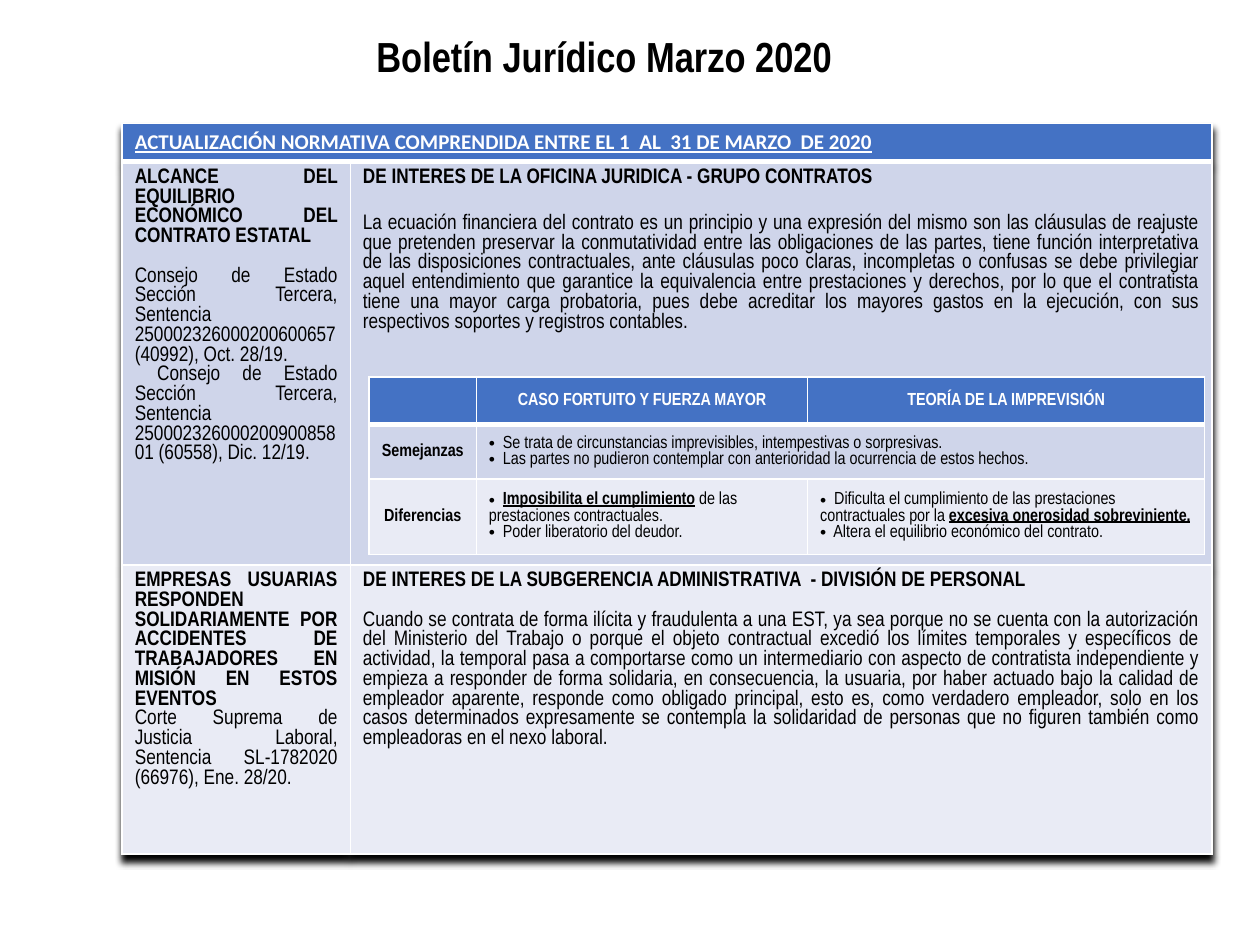
import pptx
import pptx.dml.color
import pptx.enum.text
import pptx.oxml
import pptx.oxml.ns
import pptx.util
import lxml.etree

COLORS = {"white": "FFFFFF", "black": "000000", "head": "4472C4",
          "odd": "CFD5EA", "even": "E9EBF5"}
ALIGN = pptx.enum.text.PP_ALIGN
ANCHOR = pptx.enum.text.MSO_ANCHOR
NS = pptx.oxml.ns.nsdecls("a")


def rgb(name):
    return pptx.dml.color.RGBColor.from_string(COLORS[name])


def write(p, text, size=12, font="Arial Narrow", color="black", bold=False,
          underline=False, align=None, before=0, bullet=False):
    if bullet:
        pPr = p._p.get_or_add_pPr()
        pPr.set("marL", "0")
        pPr.set("indent", "0")
        pPr.append(pptx.oxml.parse_xml(f'<a:buFont {NS} typeface="Arial"/>'))
        pPr.append(pptx.oxml.parse_xml(f'<a:buChar {NS} char="•"/>'))
    p.alignment = align
    if before:
        p.space_before = pptx.util.Pt(before)
    for i, piece in enumerate(text.split("**")):
        if i and not piece:
            continue
        r = p.add_run()
        r.text = piece
        r.font.size = pptx.util.Pt(size)
        r.font.name = font
        r.font.bold = bold or i % 2 == 1
        r.font.underline = underline or i % 2 == 1
        r.font.color.rgb = rgb(color)


class Deck:
    """Draws on one slide, with lengths as hundredths of its width and height."""

    def __init__(self, prs):
        self.prs = prs
        self.s = prs.slides.add_slide(prs.slide_layouts[5])

    def x(self, share):
        return int(self.prs.slide_width * share / 100)

    def y(self, share):
        return int(self.prs.slide_height * share / 100)

    def title(self, text, left, top, width, height):
        sp = self.s.shapes.title
        sp.left, sp.top = self.x(left), self.y(top)
        sp.width, sp.height = self.x(width), self.y(height)
        tf = sp.text_frame
        tf.word_wrap = True
        tf.vertical_anchor = ANCHOR.MIDDLE
        write(tf.paragraphs[0], text, size=24, bold=True, align=ALIGN.CENTER)

    def table(self, left, top, cols, rows, cells, merge, anchor, shadow=False):
        frame = self.s.shapes.add_table(
            len(rows), len(cols), self.x(left), self.y(top),
            self.x(sum(cols)), self.y(sum(rows)))
        tbl = frame.table
        for column, width in zip(tbl.columns, cols):
            column.width = self.x(width)
        for row, height in zip(tbl.rows, rows):
            row.height = self.y(height)
        if shadow:
            self.shadow(tbl)
        first, last = merge
        tbl.cell(*first).merge(tbl.cell(*last))
        for i in range(len(rows)):
            for j in range(len(cols)):
                self.cell(tbl.cell(i, j), i, cells.get((i, j), []), anchor)

    def cell(self, cell, row, paragraphs, anchor):
        cell.vertical_anchor = anchor
        tcPr = cell._tc.get_or_add_tcPr()
        widths = {"L": 1, "R": 1, "T": 3 if row == 1 else 1,
                  "B": 3 if row == 0 else 1}
        for side, width in widths.items():
            tcPr.append(pptx.oxml.parse_xml(
                f'<a:ln{side} {NS} w="{pptx.util.Pt(width)}"><a:solidFill>'
                f'<a:srgbClr val="{COLORS["white"]}"/></a:solidFill></a:ln{side}>'))
        cell.fill.solid()
        cell.fill.fore_color.rgb = rgb(("head", "odd", "even")[row])
        tf = cell.text_frame
        for i, (text, fmt) in enumerate(paragraphs):
            write(tf.add_paragraph() if i else tf.paragraphs[0], text, **fmt)

    def shadow(self, tbl):
        tbl._tbl.tblPr.insert(0, pptx.oxml.parse_xml(
            f'<a:effectLst {NS}><a:outerShdw blurRad="50800" dist="50800" '
            f'dir="5400000" algn="t" rotWithShape="0"><a:srgbClr val="{COLORS["black"]}"/>'
            '</a:outerShdw></a:effectLst>'))


TEXT = {"align": ALIGN.JUSTIFY}
STRONG = {**TEXT, "bold": True}
BANNER = {**STRONG, "font": "Calibri", "color": "white", "underline": True}
LABEL = {"size": 10, "bold": True, "align": ALIGN.CENTER}
HEAD = {**LABEL, "color": "white"}
ITEM = {"size": 10, "bullet": True}

BULLETIN = {
    (0, 0): [("ACTUALIZACIÓN NORMATIVA COMPRENDIDA ENTRE EL 1  AL  31 DE MARZO  DE 2020", BANNER)],
    (1, 0): [
        ("ALCANCE DEL EQUILIBRIO ECONÓMICO DEL CONTRATO ESTATAL ", STRONG),
        ("Consejo de Estado Sección Tercera, Sentencia 250002326000200600657 "
         "(40992), Oct. 28/19.", {**TEXT, "before": 11.3}),
        (" Consejo de Estado Sección Tercera, Sentencia "
         "25000232600020090085801 (60558), Dic. 12/19.", TEXT)],
    (1, 1): [
        ("DE INTERES DE LA OFICINA JURIDICA - GRUPO CONTRATOS", STRONG),
        ("La ecuación financiera del contrato es un principio y una expresión del mismo "
         "son las cláusulas de reajuste que pretenden preservar la conmutatividad entre las "
         "obligaciones de las partes, tiene función interpretativa de las disposiciones "
         "contractuales, ante cláusulas poco claras, incompletas o confusas se debe "
         "privilegiar aquel entendimiento que garantice la equivalencia entre prestaciones "
         "y derechos, por lo que el contratista tiene una mayor carga probatoria, pues debe "
         "acreditar los mayores gastos en la ejecución, con sus respectivos soportes y "
         "registros contables.", {**TEXT, "before": 15})],
    (2, 0): [
        ("EMPRESAS USUARIAS RESPONDEN SOLIDARIAMENTE POR ACCIDENTES DE TRABAJADORES "
         "EN MISIÓN EN ESTOS EVENTOS ", STRONG),
        ("Corte Suprema de Justicia Laboral, Sentencia SL-1782020 (66976), Ene. 28/20.", TEXT)],
    (2, 1): [
        ("DE INTERES DE LA SUBGERENCIA ADMINISTRATIVA  - DIVISIÓN DE PERSONAL", STRONG),
        ("Cuando se contrata de forma ilícita y fraudulenta a una EST, ya sea porque no se "
         "cuenta con la autorización del Ministerio del Trabajo o porque el objeto "
         "contractual excedió los límites temporales y específicos de actividad, la temporal "
         "pasa a comportarse como un intermediario con aspecto de contratista independiente "
         "y empieza a responder de forma solidaria, en consecuencia, la usuaria, por haber "
         "actuado bajo la calidad de empleador aparente, responde como obligado principal, "
         "esto es, como verdadero empleador, solo en los casos determinados expresamente se "
         "contempla la solidaridad de personas que no figuren también como empleadoras en "
         "el nexo laboral.", {**TEXT, "before": 11.3})],
}

COMPARISON = {
    (0, 0): [("", HEAD)],
    (0, 1): [("CASO FORTUITO Y FUERZA MAYOR", HEAD)],
    (0, 2): [("TEORÍA DE LA IMPREVISIÓN", HEAD)],
    (1, 0): [("Semejanzas", LABEL)],
    (1, 1): [
        ("  Se trata de circunstancias imprevisibles, intempestivas o sorpresivas.", ITEM),
        ("  Las partes no pudieron contemplar con anterioridad la ocurrencia de estos hechos.",
         ITEM)],
    (2, 0): [("Diferencias", LABEL)],
    (2, 1): [
        ("  **Imposibilita el cumplimiento** de las prestaciones contractuales.", ITEM),
        ("  Poder liberatorio del deudor.", ITEM)],
    (2, 2): [
        ("  Dificulta el cumplimiento de las prestaciones contractuales por la "
         "**excesiva onerosidad sobreviniente.**", ITEM),
        ("  Altera el equilibrio económico del contrato.", ITEM)],
}


def main():
    prs = pptx.Presentation()
    prs.slide_width, prs.slide_height = pptx.util.Inches(10), pptx.util.Inches(7.5)
    deck = Deck(prs)
    deck.title("Boletín Jurídico Marzo 2020", 4.4, 2.53, 87.1, 6.67)
    deck.table(9.7, 13.07, [18.1, 68.4], [3.95, 42.67, 30.6], BULLETIN,
               ((0, 0), (0, 1)), ANCHOR.TOP, shadow=True)
    deck.table(29.3, 39.87, [8.5, 26.3, 31.5], [4.27, 5.73, 8], COMPARISON,
               ((1, 1), (1, 2)), ANCHOR.MIDDLE)
    prs.save("out.pptx")


if __name__ == "__main__":
    main()
